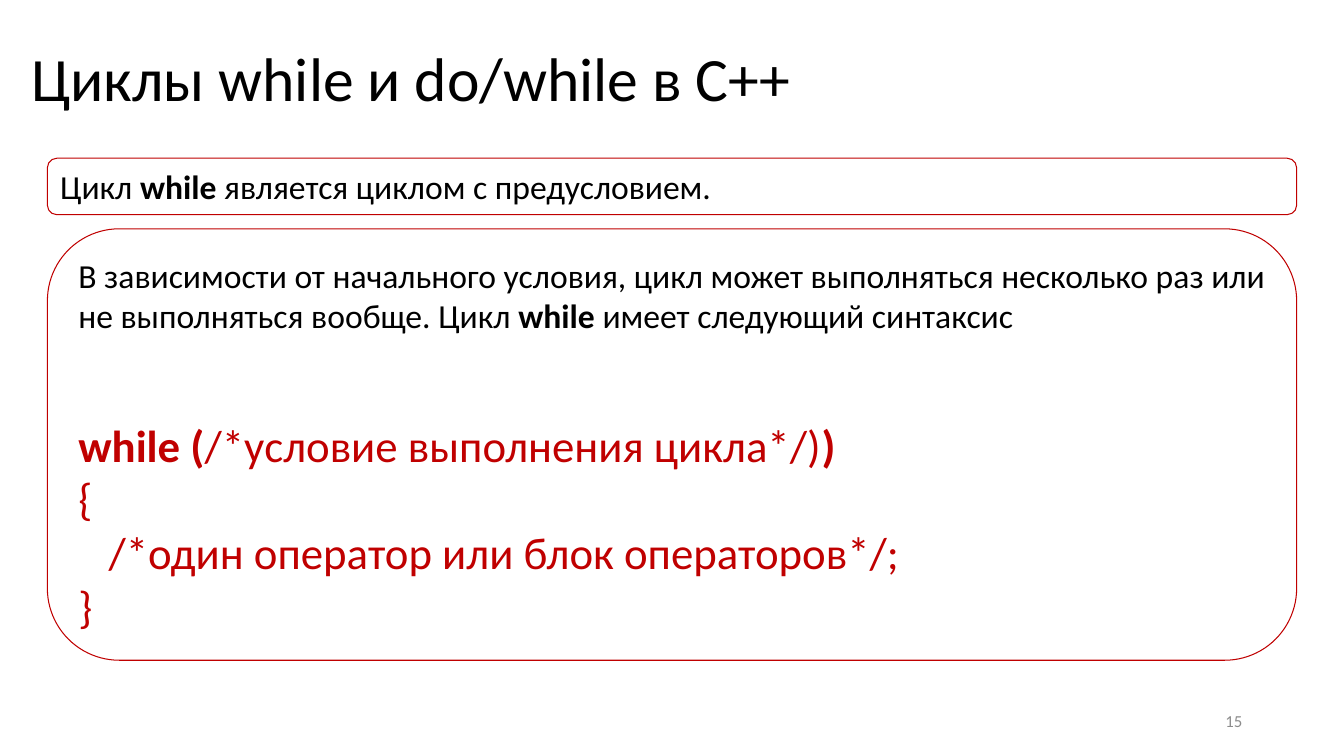
import pptx
import pptx.util
import pptx.dml.color
import pptx.enum.shapes
import pptx.enum.text

PX = 9144  # 100 px to the inch
FONT = "Calibri"
BLACK, RED, GREY = "000000", "C00000", "8C8C8C"
ALIGN = pptx.enum.text.PP_ALIGN
ANCHOR = pptx.enum.text.MSO_ANCHOR


def px(n):
    return pptx.util.Emu(n * PX)


def color(code):
    return pptx.dml.color.RGBColor.from_string(code)


def write(para, runs, size, code, align=ALIGN.LEFT):
    """Fill a paragraph with (text, bold) runs."""
    para.alignment = align
    para.font.name = FONT
    para.font.size = pptx.util.Pt(size)
    para.font.color.rgb = color(code)
    for text, bold in runs:
        run = para.add_run()
        run.text = text
        if bold:
            run.font.bold = True


def label(slide, box, text, size, code, align=ALIGN.LEFT):
    """Plain text line, centred in the height of its box."""
    frame = slide.shapes.add_textbox(*map(px, box)).text_frame
    frame.word_wrap = True
    frame.vertical_anchor = ANCHOR.MIDDLE
    para = frame.paragraphs[0]
    write(para, [(text, False)], size, code, align)
    return para


def panel(slide, box):
    """Rounded red outline; gives back its text frame."""
    kind = pptx.enum.shapes.MSO_SHAPE.ROUNDED_RECTANGLE
    shape = slide.shapes.add_shape(kind, *map(px, box))
    shape.shadow.inherit = False
    shape.fill.background()
    shape.line.color.rgb = color(RED)
    shape.line.width = pptx.util.Pt(0.75)
    frame = shape.text_frame
    frame.word_wrap = True
    frame.vertical_anchor = ANCHOR.TOP
    return frame


def intro(slide, box):
    runs = [("Цикл ", False), ("while", True),
            (" является циклом с предусловием.", False)]
    write(panel(slide, box).paragraphs[0], runs, 24, BLACK)


def syntax(slide, box):
    frame = panel(slide, box)
    runs = [("В зависимости от начального условия, цикл может выполняться "
             "несколько раз или не выполняться вообще. Цикл ", False),
            ("while", True), (" имеет следующий синтаксис", False)]
    write(frame.paragraphs[0], runs, 24, BLACK)

    # Code lines: runs, left indent in px
    code = [
        ([("while (", True), ("/*условие выполнения цикла*/)", False),
          (")", True)], 0),
        ([("{", False)], 0),
        ([("/*один оператор или блок операторов*/;", False)], 30),
        ([("}", False)], 0),
    ]
    for i, (runs, indent) in enumerate(code):
        para = frame.add_paragraph()
        write(para, runs, 32, RED)
        if i == 0:
            para.space_before = pptx.util.Pt(58.5)
        if indent:
            para._p.get_or_add_pPr().set("marL", str(px(indent)))


def main():
    deck = pptx.Presentation()
    deck.slide_width, deck.slide_height = px(1333), px(750)
    slide = deck.slides.add_slide(deck.slide_layouts[6])

    # Title
    title = label(slide, (21, 31, 927, 100),
                  "Циклы while и do/while в C++", 44, BLACK)
    title.line_spacing = 0.9

    # Panels
    left, width = 47, 1239
    intro(slide, (left, 157, width, 56))
    syntax(slide, (left, 227, width, 428))

    # Page number
    label(slide, (942, 695, 300, 40), "15", 12, GREY, ALIGN.RIGHT)

    deck.save("out.pptx")


if __name__ == "__main__":
    main()
